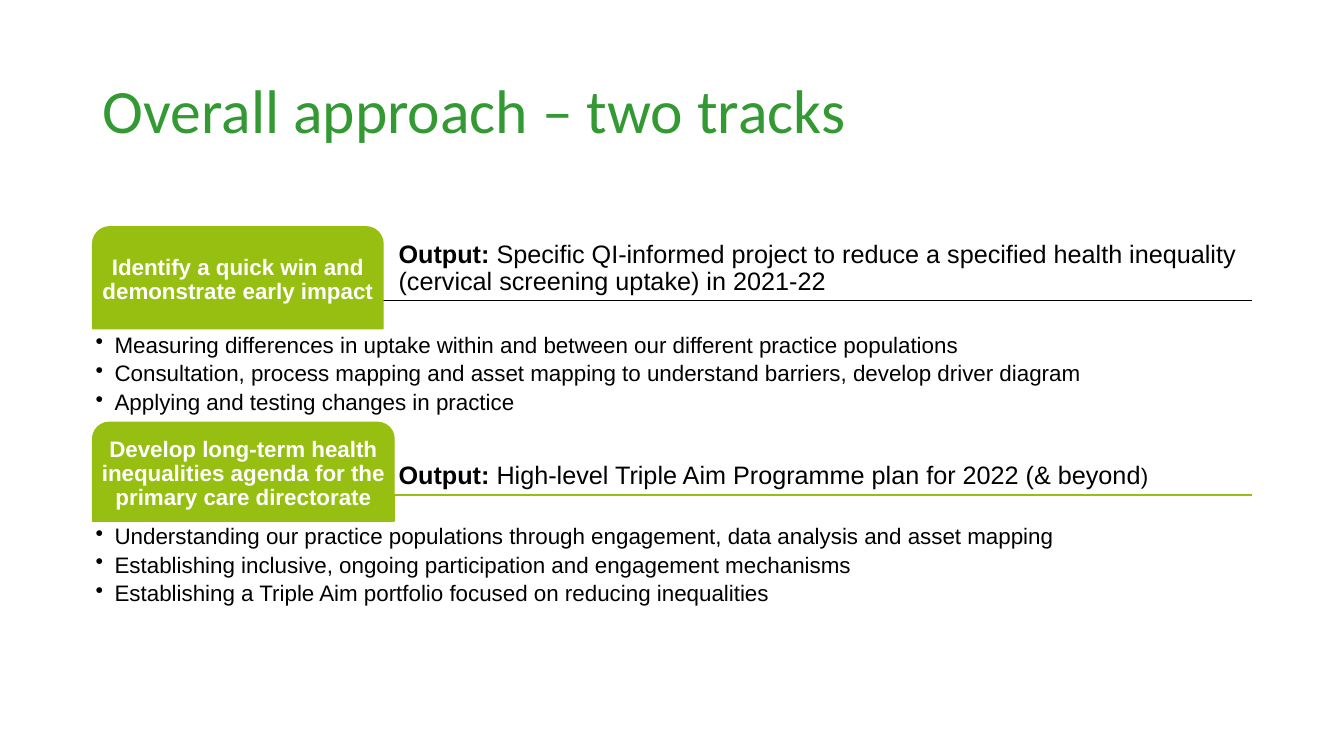
import pptx
import pptx.util
import pptx.dml.color
import pptx.enum.shapes
import pptx.enum.text
from lxml import etree

Pt = pptx.util.Pt
ALIGN = pptx.enum.text.PP_ALIGN
ANCHOR = pptx.enum.text.MSO_ANCHOR
SHAPE = pptx.enum.shapes.MSO_SHAPE
LINE = pptx.enum.shapes.MSO_CONNECTOR
NS = "http://schemas.openxmlformats.org/drawingml/2006/main"

GREEN, BLACK, WHITE = "97BF11", "000000", "FFFFFF"
LEFT, WIDTH = 66.2, 828
TEXT_X = 281.5  # left edge of the output texts

TRACKS = [
    dict(
        top=162, tab=(207.4, 72.7), rule=214.6, tint=BLACK, depth=65.5,
        name="Identify a quick win and demonstrate early impact",
        output=[("Specific QI-informed project to reduce a specified health "
                 "inequality (cervical screening uptake) in 2021-22", 18)],
        steps=["Measuring differences in uptake within and between our "
               "different practice populations",
               "Consultation, process mapping and asset mapping to understand "
               "barriers, develop driver diagram",
               "Applying and testing changes in practice"]),
    dict(
        top=301.7, tab=(215.3, 70.6), rule=353.5, tint=GREEN, depth=64.1,
        name="Develop long-term health inequalities agenda for the "
             "primary care directorate",
        output=[("High-level Triple Aim Programme plan for 2022 (& beyond", 18),
                (")", 16)],
        steps=["Understanding our practice populations through engagement, "
               "data analysis and asset mapping",
               "Establishing inclusive, ongoing participation and engagement "
               "mechanisms",
               "Establishing a Triple Aim portfolio focused on reducing "
               "inequalities"]),
]


def paint(code):
    return pptx.dml.color.RGBColor.from_string(code)


def style(para, size, code, face="Arial", bold=None):
    para.line_spacing = 0.9
    font = para.font
    font.name, font.size, font.bold = face, Pt(size), bold
    font.color.rgb = paint(code)


def setup(frame, inset, anchor):
    frame.word_wrap = True
    frame.vertical_anchor = anchor
    frame.margin_left = frame.margin_right = Pt(inset)
    frame.margin_top = frame.margin_bottom = Pt(inset)


def add_text(slide, box, inset, anchor):
    frame = slide.shapes.add_textbox(*map(Pt, box)).text_frame
    setup(frame, inset, anchor)
    return frame


def add_title(slide, box):
    title = slide.shapes.title
    title.left, title.top, title.width, title.height = map(Pt, box)
    title.text_frame.text = "Overall approach – two tracks"
    title.text_frame.vertical_anchor = ANCHOR.MIDDLE
    para = title.text_frame.paragraphs[0]
    para.alignment = ALIGN.LEFT
    style(para, 44, "339933", "Calibri")


def add_rule(slide, x, y, width, code):
    rule = slide.shapes.add_connector(
        LINE.STRAIGHT, Pt(x), Pt(y), Pt(x + width), Pt(y))
    rule.line.color.rgb = paint(code)
    rule.line.width = Pt(1)
    etree.SubElement(rule._element.spPr, f"{{{NS}}}effectLst")


def add_tab(slide, box, name):
    tab = slide.shapes.add_shape(SHAPE.ROUND_2_SAME_RECTANGLE, *map(Pt, box))
    tab.shadow.inherit = False
    tab.fill.solid()
    tab.fill.fore_color.rgb = tab.line.color.rgb = paint(GREEN)
    tab.line.width = Pt(1)
    setup(tab.text_frame, 2.2, ANCHOR.MIDDLE)
    para = tab.text_frame.paragraphs[0]
    para.text = name
    para.alignment = ALIGN.CENTER
    style(para, 16, WHITE, bold=True)


def add_output(slide, box, parts):
    para = add_text(slide, box, 3.2, ANCHOR.BOTTOM).paragraphs[0]
    style(para, 18, BLACK)
    for text, size in [("Output: ", 18)] + parts:
        run = para.add_run()
        run.text = text
        run.font.size = Pt(size)
        run.font.bold = text == "Output: "


def add_steps(slide, box, steps):
    frame = add_text(slide, box, 2.2, ANCHOR.MIDDLE)
    for i, step in enumerate(steps):
        para = frame.add_paragraph() if i else frame.paragraphs[0]
        para.text = step
        para.level = 1
        para.space_after = Pt(3.2)
        style(para, 16, BLACK)
        # Bullet with a hanging indent
        props = para._p.get_or_add_pPr()
        props.set("marL", str(Pt(13.5)))
        props.set("indent", str(Pt(-13.5)))
        mark = etree.Element(f"{{{NS}}}buChar", char="•")
        props.find(f"{{{NS}}}defRPr").addprevious(mark)


def add_track(slide, x, width, track):
    top, rule = track["top"], track["rule"]
    wide, high = track["tab"]
    # Rule, with the output text standing on it
    add_rule(slide, x, rule, width, track["tint"])
    add_output(slide, (TEXT_X, rule - 32.4, x + width - TEXT_X, 32.4),
               track["output"])
    # Tab, with the steps below it
    add_tab(slide, (x, top, wide, high), track["name"])
    add_steps(slide, (x, top + high, width, track["depth"]), track["steps"])


def main():
    deck = pptx.Presentation()
    deck.slide_width, deck.slide_height = Pt(960), Pt(540)
    slide = deck.slides.add_slide(deck.slide_layouts[5])
    add_title(slide, (LEFT, 28.8, WIDTH, 104.4))
    for track in TRACKS:
        add_track(slide, LEFT, WIDTH, track)
    deck.save("out.pptx")


if __name__ == "__main__":
    main()
